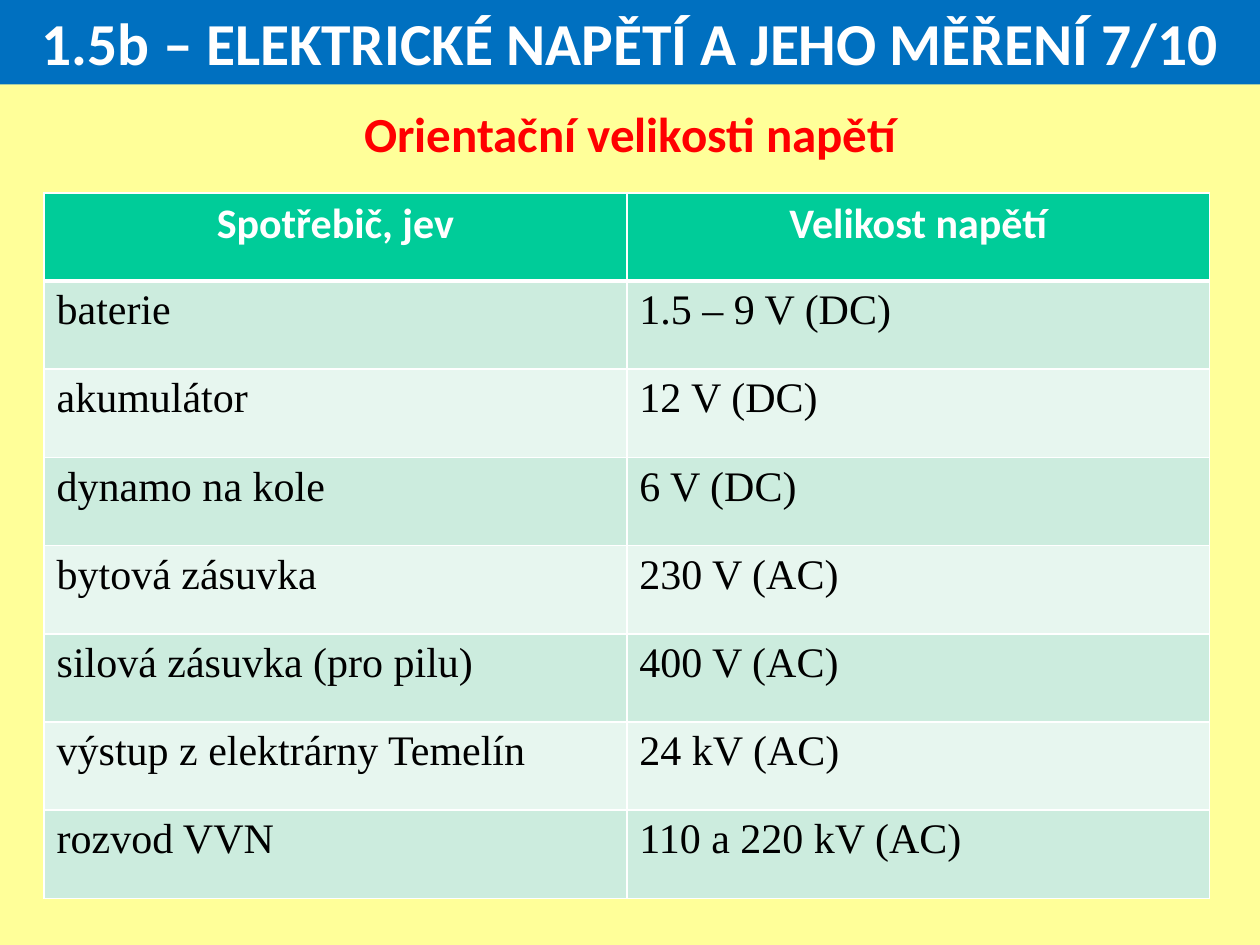
from lxml.etree import SubElement as Sub
from pptx import Presentation as Deck
from pptx.dml.color import RGBColor as Color
from pptx.enum.text import MSO_ANCHOR as Anchor, MSO_AUTO_SIZE as Fit, PP_ALIGN as Align
from pptx.oxml.ns import qn
from pptx.util import Inches, Pt

BLUE = Color(0x00, 0x70, 0xC0)
CREAM = Color(0xFF, 0xFF, 0x99)
RED = Color(0xFF, 0x00, 0x00)
WHITE = Color(0xFF, 0xFF, 0xFF)
BLACK = Color(0x00, 0x00, 0x00)
GREEN = Color(0x00, 0xCC, 0x99)
MINT = Color(0xCC, 0xEC, 0xDE)
PALE = Color(0xE7, 0xF6, 0xEF)

SANS, SERIF = "Calibri", "Times New Roman"
ROWS = [
    ("Spotřebič, jev", "Velikost napětí"),
    ("baterie", "1.5 – 9 V (DC)"),
    ("akumulátor", "12 V (DC)"),
    ("dynamo na kole", "6 V (DC)"),
    ("bytová zásuvka", "230 V (AC)"),
    ("silová zásuvka (pro pilu)", "400 V (AC)"),
    ("výstup z elektrárny Temelín", "24 kV (AC)"),
    ("rozvod VVN", "110 a 220 kV (AC)"),
]


def write(frame, text, size, color, face=SANS, bold=True, align=Align.CENTER):
    """Put one formatted run into the first paragraph of a text frame."""
    para = frame.paragraphs[0]
    para.alignment = align
    run = para.add_run()
    run.text = text
    font = run.font
    font.size, font.name, font.bold = Pt(size), face, bold
    font.color.rgb = color


def add_title(slide, box, text):
    """Turn the title placeholder into the blue band."""
    title = slide.shapes.title
    title.left, title.top, title.width, title.height = map(Inches, box)
    title.fill.solid()
    title.fill.fore_color.rgb = BLUE
    frame = title.text_frame
    frame.auto_size = Fit.NONE
    frame.vertical_anchor = Anchor.MIDDLE
    write(frame, text, 34, WHITE)


def add_head(slide, box, text):
    """Add the red heading above the table."""
    frame = slide.shapes.add_textbox(*map(Inches, box)).text_frame
    frame.word_wrap = True
    write(frame, text, 28, RED)


def add_edge(cell, side, width):
    """Draw one white border of a cell."""
    line = Sub(cell._tc.get_or_add_tcPr(), qn(f"a:ln{side}"), w=str(Pt(width)))
    fill = Sub(line, qn("a:solidFill"))
    Sub(fill, qn("a:srgbClr"), val=str(WHITE))


def add_grid(slide, box, rows):
    """Add the voltage table with equal rows and columns."""
    grid = slide.shapes.add_table(len(rows), len(rows[0]), *map(Inches, box)).table
    for i, row in enumerate(rows):
        for j, text in enumerate(row):
            cell = grid.cell(i, j)
            thick = {0: "B", 1: "T"}.get(i)
            for side in "LRTB":
                add_edge(cell, side, 3 if side == thick else 1)
            cell.fill.solid()
            if i == 0:
                cell.fill.fore_color.rgb = GREEN
                write(cell.text_frame, text, 24, WHITE)
            else:
                cell.fill.fore_color.rgb = MINT if i % 2 else PALE
                write(cell.text_frame, text, 24, BLACK, SERIF, False, Align.LEFT)


def main():
    """Build the slide and save it."""
    deck = Deck()
    deck.slide_width, deck.slide_height = Inches(10), Inches(7.5)
    slide = deck.slides.add_slide(deck.slide_layouts[5])
    back = slide.background.fill
    back.solid()
    back.fore_color.rgb = CREAM
    add_title(slide, (0, 0, 10, 0.67), "1.5b – ELEKTRICKÉ NAPĚTÍ A JEHO MĚŘENÍ 7/10")
    add_head(slide, (0, 0.77, 10, 0.57), "Orientační velikosti napětí")
    add_grid(slide, (0.35, 1.53, 9.25, 5.6), ROWS)
    deck.save("out.pptx")


if __name__ == "__main__":
    main()
